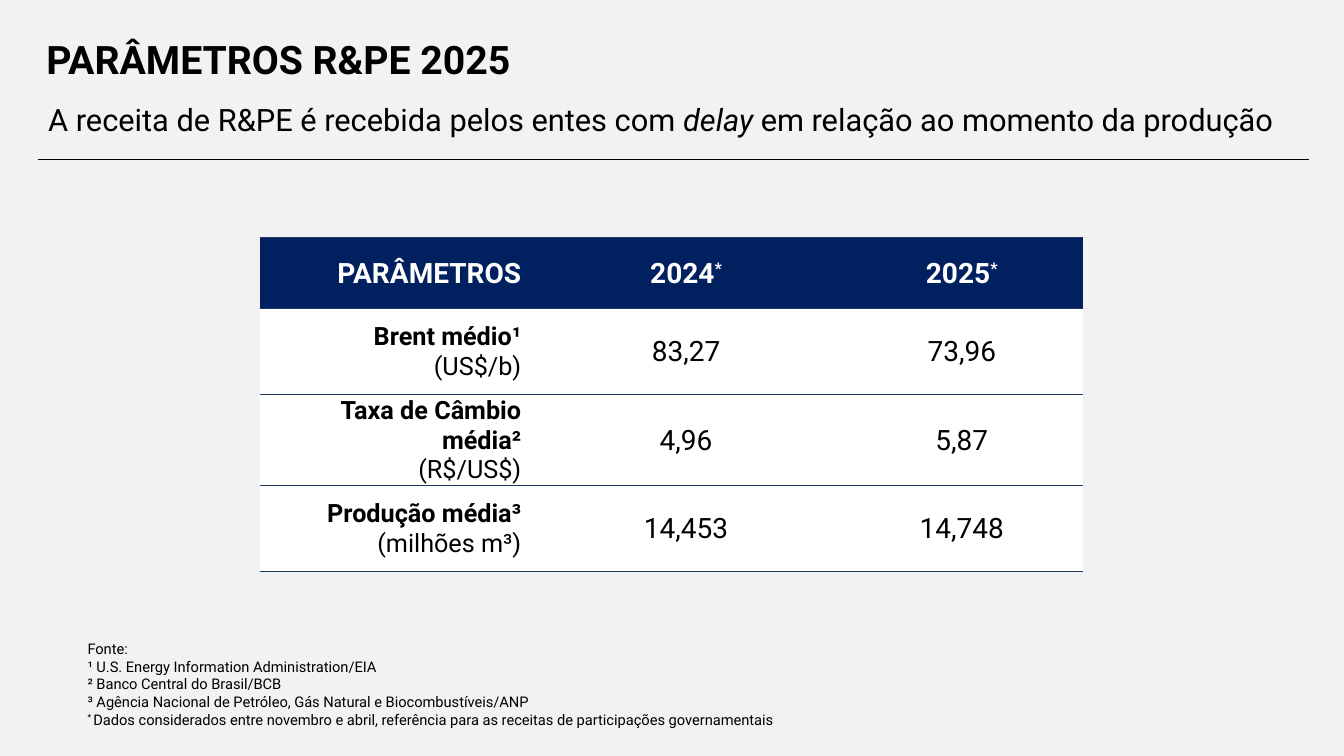
from lxml import etree
from pptx import Presentation
from pptx import util as u
from pptx.dml.color import RGBColor
from pptx.enum import shapes, text
from pptx.oxml.ns import qn

PX = 9144
FONT = "Roboto"
COLORS = {"bg": "F2F2F2", "ink": "000000", "white": "FFFFFF",
          "header": "002060", "rule": "203864"}
LEFT, CENTER, RIGHT = text.PP_ALIGN.LEFT, text.PP_ALIGN.CENTER, text.PP_ALIGN.RIGHT
COLUMNS = [260, 59, 207, 50, 240]
ROW_HEIGHTS = [70, 85, 90, 85]
PARAMETERS = [
    ("Brent médio¹", "(US$/b)", "83,27", "73,96"),
    ("Taxa de Câmbio média²", "(R$/US$)", "4,96", "5,87"),
    ("Produção média³", "(milhões m³)", "14,453", "14,748"),
]
SOURCES = [
    "Fonte:",
    "¹ U.S. Energy Information Administration/EIA",
    "² Banco Central do Brasil/BCB",
    "³ Agência Nacional de Petróleo, Gás Natural e Biocombustíveis/ANP",
]
SOURCE_NOTE = ("Dados considerados entre novembro e abril, referência para as "
               "receitas de participações governamentais")


def px(*lengths):
    """Turn px lengths into EMU."""
    return [u.Emu(n * PX) for n in lengths]


def rgb(name):
    """Look up a named colour."""
    return RGBColor.from_string(COLORS[name])


def add_run(p, words, size=18, color="ink", bold=False, italic=False, raised=False):
    """Append one formatted run to a paragraph."""
    r = p.add_run()
    r.text = words
    r.font.name, r.font.size = FONT, u.Pt(size)
    r.font.bold, r.font.italic = bold, italic
    r.font.color.rgb = rgb(color)
    if raised:
        r.font._element.set("baseline", "30000")


def write(tf, paragraphs, align=LEFT, spacing=None, **base):
    """Fill a text frame with paragraphs given as lists of (words, format) runs."""
    for i, runs in enumerate(paragraphs):
        p = tf.paragraphs[0] if i == 0 else tf.add_paragraph()
        p.alignment = align
        if spacing:
            p.line_spacing = spacing
        for words, extra in runs:
            add_run(p, words, **{**base, **extra})


def add_text(slide, box, paragraphs, anchor=text.MSO_ANCHOR.TOP, **fmt):
    """Add a wrapping text box."""
    tf = slide.shapes.add_textbox(*px(*box)).text_frame
    tf.word_wrap = True
    tf.vertical_anchor = anchor
    write(tf, paragraphs, **fmt)


def add_heading(slide, x, y, w):
    """Place the title, the subtitle and the rule below them."""
    title = slide.shapes.title
    title.left, title.top, title.width, title.height = px(x - 2, y, 940, 79)
    tf = title.text_frame
    tf.auto_size = text.MSO_AUTO_SIZE.NONE
    tf.vertical_anchor = text.MSO_ANCHOR.MIDDLE
    write(tf, [[("PARÂMETROS R&PE 2025", {})]], spacing=0.9, size=28, bold=True)
    subtitle = [("A receita de R&PE é recebida pelos entes com ", {}),
                ("delay ", {"italic": True}),
                ("em relação ao momento da produção", {})]
    add_text(slide, (x, y + 63, w, 59), [subtitle],
             anchor=text.MSO_ANCHOR.MIDDLE, spacing=1.2, size=22)
    rule = slide.shapes.add_connector(
        shapes.MSO_CONNECTOR.STRAIGHT, *px(x, y + 136, x + w, y + 136))
    rule.line.color.rgb, rule.line.width = rgb("ink"), u.Pt(0.5)
    etree.SubElement(rule._element.spPr, qn("a:effectLst"))


def set_borders(cell):
    """Draw the top and bottom edges of a cell and hide its sides."""
    tc_pr = cell._tc.get_or_add_tcPr()
    for i, side in enumerate(("lnL", "lnR", "lnT", "lnB")):
        ln = etree.Element(qn("a:" + side), w="12700")
        tc_pr.insert(i, ln)
        if side in ("lnL", "lnR"):
            etree.SubElement(ln, qn("a:noFill"))
        else:
            fill = etree.SubElement(ln, qn("a:solidFill"))
            etree.SubElement(fill, qn("a:srgbClr"), val=COLORS["rule"])


def add_parameters(slide, x, y):
    """Place the table of parameters by year."""
    box = px(x, y, sum(COLUMNS), sum(ROW_HEIGHTS))
    table = slide.shapes.add_table(len(ROW_HEIGHTS), len(COLUMNS), *box).table
    table.horz_banding = False
    for column, width in zip(table.columns, px(*COLUMNS)):
        column.width = width
    for row, height in zip(table.rows, px(*ROW_HEIGHTS)):
        row.height = height
    for i, row in enumerate(table.rows):
        for cell in row.cells:
            cell.fill.solid()
            cell.fill.fore_color.rgb = rgb("white" if i else "header")
            cell.vertical_anchor = text.MSO_ANCHOR.MIDDLE
            cell.margin_left, cell.margin_top, cell.margin_right, cell.margin_bottom = px(1, 1, 1, 0)
            set_borders(cell)

    head = {"size": 20, "color": "white", "bold": True}
    write(table.cell(0, 0).text_frame, [[("PARÂMETROS", {})]], align=RIGHT, **head)
    for col, year in ((2, "2024"), (4, "2025")):
        write(table.cell(0, col).text_frame,
              [[(year, {}), ("*", {"raised": True})]], align=CENTER, **head)
    for i, (name, unit, *values) in enumerate(PARAMETERS, 1):
        write(table.cell(i, 0).text_frame,
              [[(name, {"bold": True})], [(unit, {})]], align=RIGHT)
        for col, value in zip((2, 4), values):
            write(table.cell(i, col).text_frame, [[(value, {})]], align=CENTER, size=20)


def add_sources(slide, box):
    """Place the source notes."""
    paragraphs = [[(line, {})] for line in SOURCES]
    paragraphs.append([("* ", {"raised": True}), (SOURCE_NOTE, {})])
    add_text(slide, box, paragraphs, size=10.5)


def main():
    """Build and save the slide."""
    prs = Presentation()
    prs.slide_width, prs.slide_height = px(1333, 750)
    slide = prs.slides.add_slide(prs.slide_layouts[5])
    slide.background.fill.solid()
    slide.background.fill.fore_color.rgb = rgb("bg")
    add_heading(slide, 38, 22, 1260)
    add_parameters(slide, 258, 236)
    add_sources(slide, (77, 630, 1160, 98))
    prs.save("out.pptx")


if __name__ == "__main__":
    main()
